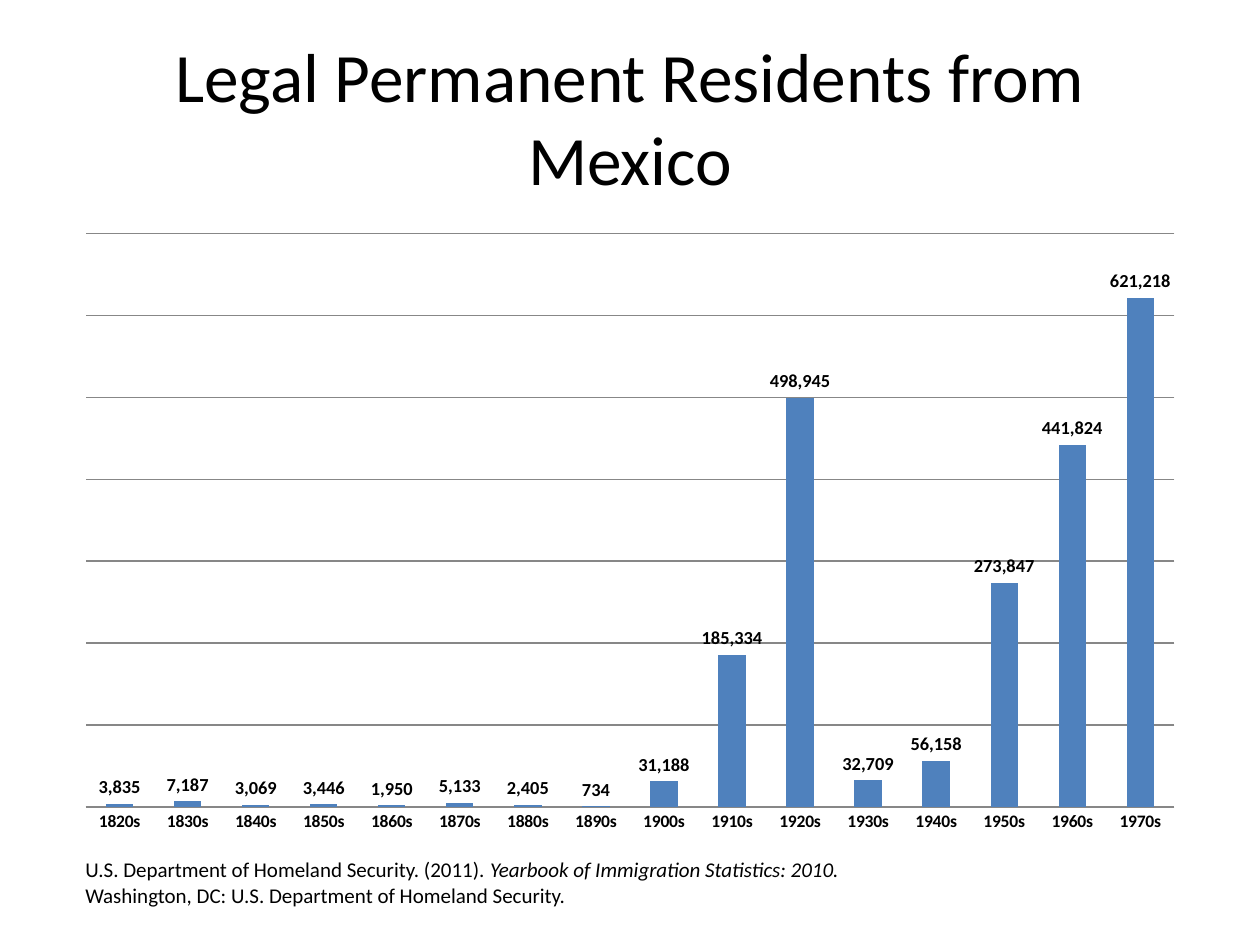
import dataclasses

import pptx
import pptx.chart.data
import pptx.dml.color
import pptx.enum.chart
import pptx.enum.text
import pptx.util

Cm = pptx.util.Cm
Pt = pptx.util.Pt


@dataclasses.dataclass(frozen=True)
class Theme:
    font: str = "Calibri"
    ink: str = "000000"
    bar: str = "4F81BD"
    grid: str = "878787"
    title_size: float = 39.6
    source_size: float = 12
    axis_size: float = 10
    label_size: float = 10.5


class SlideBuilder:
    def __init__(self, slide, theme):
        self.slide = slide
        self.theme = theme

    def color(self, code):
        return pptx.dml.color.RGBColor.from_string(code)

    def style(self, font, size, bold=False, italic=False):
        font.name = self.theme.font
        font.size = Pt(size)
        font.bold = bold
        font.italic = italic
        font.color.rgb = self.color(self.theme.ink)

    def add_run(self, paragraph, text, size, italic=False):
        run = paragraph.add_run()
        run.text = text
        self.style(run.font, size, italic=italic)

    def title(self, text, left, top, width, height):
        heading = self.slide.shapes.title
        heading.left, heading.top = Cm(left), Cm(top)
        heading.width, heading.height = Cm(width), Cm(height)
        frame = heading.text_frame
        frame.auto_size = pptx.enum.text.MSO_AUTO_SIZE.NONE
        frame.vertical_anchor = pptx.enum.text.MSO_ANCHOR.MIDDLE
        paragraph = frame.paragraphs[0]
        paragraph.alignment = pptx.enum.text.PP_ALIGN.CENTER
        self.add_run(paragraph, text, self.theme.title_size)

    def column_chart(self, series_name, counts, left, top, width, height):
        theme = self.theme
        data = pptx.chart.data.CategoryChartData(number_format="#,##0")
        data.categories = list(counts)
        data.add_series(series_name, list(counts.values()))
        chart = self.slide.shapes.add_chart(
            pptx.enum.chart.XL_CHART_TYPE.COLUMN_CLUSTERED,
            Cm(left), Cm(top), Cm(width), Cm(height), data).chart
        chart.has_title = False
        chart.has_legend = False
        self.style(chart.font, theme.axis_size)

        # Decades along the bottom
        decades = chart.category_axis
        decades.major_tick_mark = pptx.enum.chart.XL_TICK_MARK.NONE
        self.style(decades.tick_labels.font, theme.axis_size, bold=True)

        # Hidden value axis with visible gridlines
        residents = chart.value_axis
        residents.visible = False
        residents.minimum_scale = 0
        residents.maximum_scale = 700000
        residents.major_unit = 100000
        residents.has_major_gridlines = True
        for line in (decades.format.line, residents.major_gridlines.format.line):
            line.color.rgb = self.color(theme.grid)
            line.width = Pt(0.75)

        # Bars and their values
        plot = chart.plots[0]
        plot.gap_width = 150
        plot.vary_by_categories = False
        bars = plot.series[0]
        bars.format.fill.solid()
        bars.format.fill.fore_color.rgb = self.color(theme.bar)
        labels = bars.data_labels
        labels.show_value = True
        labels.number_format = "#,##0"
        labels.number_format_is_linked = False
        labels.position = pptx.enum.chart.XL_LABEL_POSITION.OUTSIDE_END
        self.style(labels.font, theme.label_size, bold=True)

    def source_note(self, parts, left, top, width, height):
        note = self.slide.shapes.add_textbox(
            Cm(left), Cm(top), Cm(width), Cm(height))
        frame = note.text_frame
        frame.word_wrap = True
        frame.auto_size = pptx.enum.text.MSO_AUTO_SIZE.SHAPE_TO_FIT_TEXT
        for text, italic in parts:
            self.add_run(frame.paragraphs[0], text, self.theme.source_size, italic)


def main():
    deck = pptx.Presentation()
    deck.slide_width, deck.slide_height = Cm(25.4), Cm(19.05)
    title_only = deck.slide_layouts[5]
    builder = SlideBuilder(deck.slides.add_slide(title_only), Theme())

    builder.title("Legal Permanent Residents from Mexico", 1.27, 0.76, 22.86, 3.18)

    # Residents admitted per decade, from the 1820s on
    admissions = [3835, 7187, 3069, 3446, 1950, 5133, 2405, 734, 31188, 185334,
                  498945, 32709, 56158, 273847, 441824, 621218]
    by_decade = {f"{1820 + 10 * step}s": count
                 for step, count in enumerate(admissions)}
    builder.column_chart("Series 1", by_decade, 1.27, 4.45, 22.86, 12.57)

    # Citation
    builder.source_note([
        ("U.S. Department of Homeland Security. (2011). ", False),
        ("Yearbook of Immigration Statistics: 2010. ", True),
        ("Washington, DC: U.S. Department of Homeland Security.", False),
    ], 1.47, 17.15, 15.88, 1.27)

    deck.save("out.pptx")


if __name__ == "__main__":
    main()
